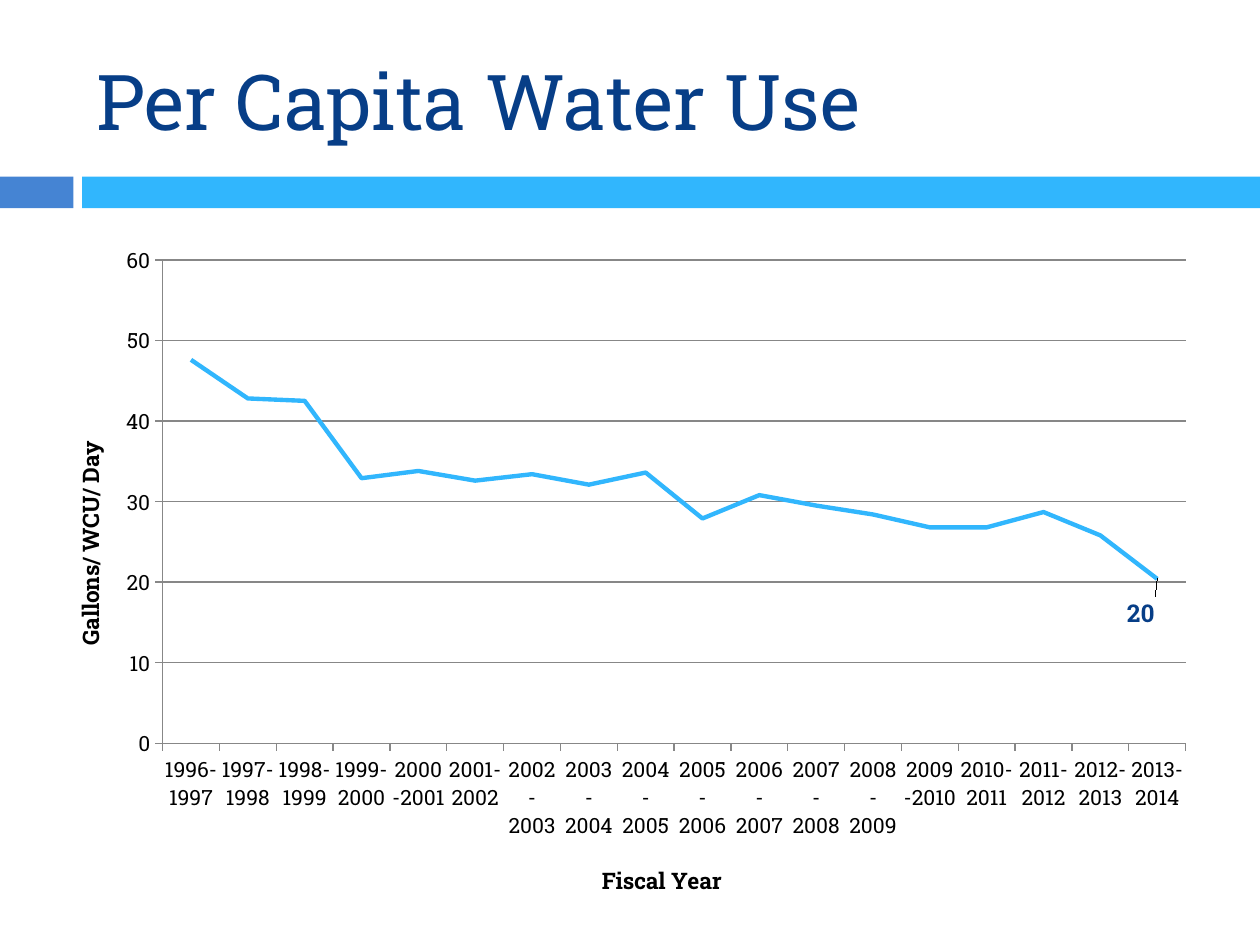
from lxml import etree
from pptx import Presentation
from pptx.chart import data as chart_data
from pptx.dml import color
from pptx.enum import chart as kinds, shapes, text
from pptx.oxml import ns
from pptx.util import Pt

FONT = "Roboto Slab"
NAVY, SKY, BLUE, GRAY, BLACK = "073E87", "31B6FD", "4584D3", "878787", "000000"
USE = [47.6, 42.8, 42.5, 32.9, 33.8, 32.6, 33.4, 32.1, 33.6,
       27.9, 30.8, 29.5, 28.4, 26.8, 26.8, 28.7, 25.8, 20.4]
YEARS = [f"{year}-{year + 1}" for year in range(1996, 1996 + len(USE))]


def rgb(value):
    """Turn a hex string into a colour."""
    return color.RGBColor.from_string(value)


def style_font(font, size, ink, bold=False):
    """Set face, size, colour and weight of a font."""
    font.name, font.size, font.bold = FONT, Pt(size), bold
    font.color.rgb = rgb(ink)


def style_line(line, ink, width):
    """Set colour and width of a line."""
    line.color.rgb = rgb(ink)
    line.width = Pt(width)


def set_layout(element, index, **values):
    """Give a chart part a manual layout as fractions of the chart."""
    for old in element.findall(ns.qn("c:layout")):
        element.remove(old)
    layout = etree.Element(ns.qn("c:layout"))
    manual = etree.SubElement(layout, ns.qn("c:manualLayout"))
    for name, value in values.items():
        etree.SubElement(manual, ns.qn(f"c:{name}")).set("val", str(value))
    element.insert(index, layout)


def add_title(page, left, top, width, height):
    """Place and format the slide title."""
    box = page.shapes.title
    box.left, box.top, box.width, box.height = map(Pt, (left, top, width, height))
    frame = box.text_frame
    frame.text = "Per Capita Water Use"
    frame.vertical_anchor = text.MSO_ANCHOR.MIDDLE
    para = frame.paragraphs[0]
    para.alignment = text.PP_ALIGN.LEFT
    style_font(para.runs[0].font, 44, NAVY)


def add_band(page, left, top, width, height):
    """Draw the two-part band under the title."""
    short, gap = 42, 5
    parts = ((left, short, BLUE),
             (left + short + gap, width - short - gap, SKY))
    for start, length, fill in parts:
        bar = page.shapes.add_shape(shapes.MSO_SHAPE.RECTANGLE,
                                    Pt(start), Pt(top), Pt(length), Pt(height))
        bar.shadow.inherit = False
        bar.fill.solid()
        bar.fill.fore_color.rgb = rgb(fill)
        bar.line.fill.background()


def style_axis(axis, title, x, y):
    """Format an axis and place its title."""
    axis.major_tick_mark = kinds.XL_TICK_MARK.OUTSIDE
    axis.minor_tick_mark = kinds.XL_TICK_MARK.NONE
    style_font(axis.tick_labels.font, 12, BLACK)
    style_line(axis.format.line, GRAY, 0.75)
    frame = axis.axis_title.text_frame
    frame.text = title
    style_font(frame.paragraphs[0].runs[0].font, 13, BLACK, True)
    set_layout(axis.axis_title.element, 1, xMode="edge", yMode="edge", x=x, y=y)


def label_last(chart, series):
    """Label the last point with its rounded value."""
    series.data_labels.show_value = False
    label = series.points[len(USE) - 1].data_label
    style_font(label.font, 14, NAVY, True)
    label.position = kinds.XL_LABEL_POSITION.RIGHT
    element = chart.element.xpath(".//c:dLbl")[0]
    set_layout(element, 1, x=-0.03, y=0.05)
    number = etree.Element(ns.qn("c:numFmt"), formatCode="0", sourceLinked="0")
    element.insert(2, number)


def add_water_chart(page, left, top, width, height):
    """Add the line chart of water use by fiscal year."""
    data = chart_data.CategoryChartData(number_format="0")
    data.categories = YEARS
    data.add_series("Series 1", USE)
    chart = page.shapes.add_chart(kinds.XL_CHART_TYPE.LINE, Pt(left), Pt(top),
                                  Pt(width), Pt(height), data).chart
    chart.has_legend = chart.has_title = False
    style_font(chart.font, 10, BLACK)
    chart.plots[0].vary_by_categories = False
    set_layout(chart.element.xpath(".//c:plotArea")[0], 0, layoutTarget="inner",
               xMode="edge", yMode="edge", x=0.11, y=0.04, w=0.87, h=0.71)

    style_axis(chart.category_axis, "Fiscal Year", 0.48, 0.92)
    values = chart.value_axis
    style_axis(values, "Gallons/ WCU/ Day", 0.03, 0.3)
    values.axis_title.element.xpath(".//a:bodyPr")[0].set("rot", "-5400000")
    values.minimum_scale, values.maximum_scale, values.major_unit = 0, 60, 10
    values.tick_labels.number_format = "0"
    values.tick_labels.number_format_is_linked = False
    values.has_major_gridlines = True
    style_line(values.major_gridlines.format.line, GRAY, 0.75)

    series = chart.plots[0].series[0]
    series.smooth = False
    series.marker.style = kinds.XL_MARKER_STYLE.NONE
    style_line(series.format.line, SKY, 2.5)
    label_last(chart, series)


def main():
    """Build and save the deck."""
    deck = Presentation()
    deck.slide_width, deck.slide_height = Pt(720), Pt(540)
    page = deck.slides.add_slide(deck.slide_layouts[5])
    add_band(page, 0, 101, 720, 18)
    add_title(page, 48, 18, 642, 78)
    add_water_chart(page, 19, 133, 672, 389)
    deck.save("out.pptx")


if __name__ == "__main__":
    main()
